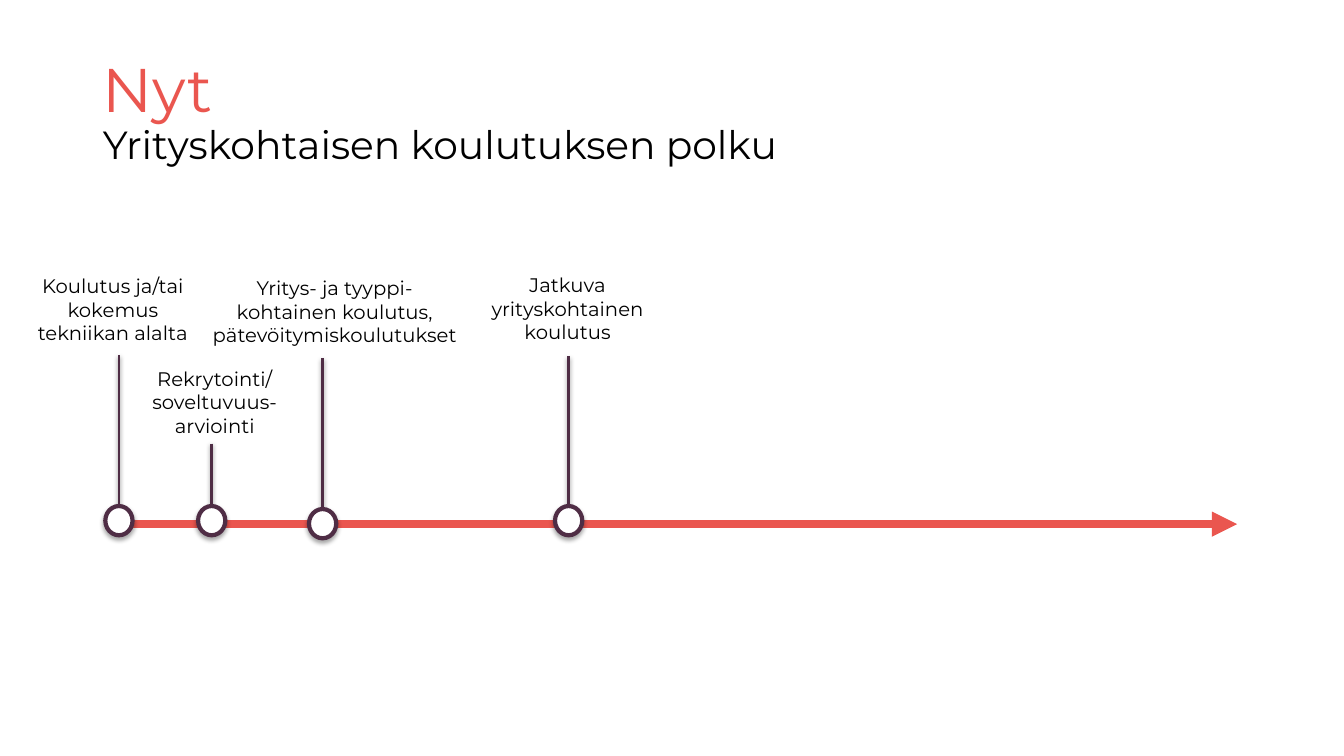
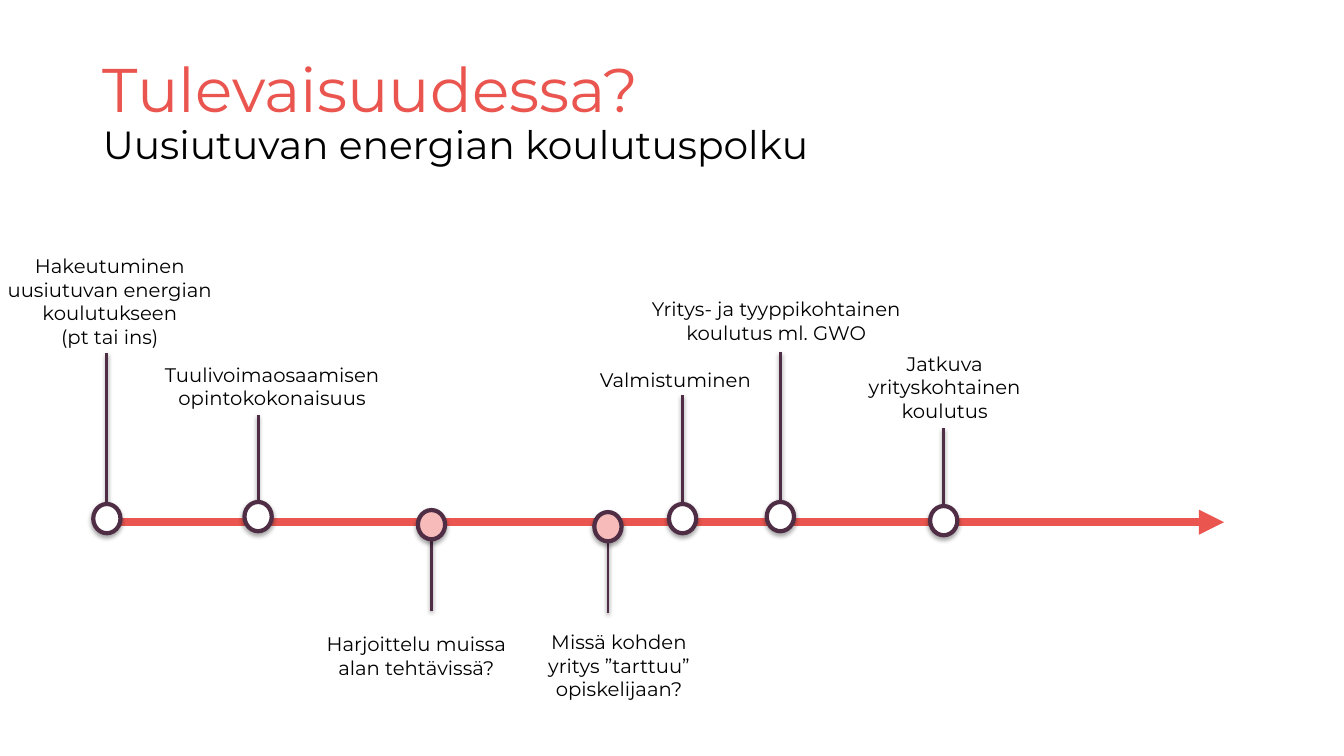
from lxml.etree import SubElement
from pptx import Presentation
from pptx.dml.color import RGBColor
from pptx.enum.shapes import MSO_CONNECTOR, MSO_SHAPE
from pptx.enum.text import MSO_ANCHOR, MSO_AUTO_SIZE, PP_ALIGN
from pptx.oxml.ns import qn
from pptx.util import Inches, Pt

FONT = "Montserrat"
CORAL = "EA564F"
PALE_CORAL = "F7BBB9"
PLUM = "4F2D45"
BLACK = "000000"
WHITE = "FFFFFF"
MARKER_WIDTH, MARKER_HEIGHT = 0.27, 0.29
AXIS_LENGTH = 11.22
LABEL_WIDTH = 2.7
LINE_HEIGHT = 0.235


def color(hex_value):
    return RGBColor.from_string(hex_value)


def set_shadow(shape, distance=0, opacity=0):
    properties = shape._element.spPr
    effects = SubElement(properties, qn("a:effectLst"))
    if opacity:
        shadow = SubElement(effects, qn("a:outerShdw"), blurRad="40000",
                            dist=str(distance), dir="5400000", rotWithShape="0")
        shade = SubElement(shadow, qn("a:srgbClr"), val=BLACK)
        SubElement(shade, qn("a:alpha"), val=str(opacity * 1000))


# Milestone: marker centre x, marker top, stem end, label centre x, label top, fill, label
slides = [
    ("Nyt", "Yrityskohtaisen koulutuksen polku", 1.05, 5.2, [
        (1.18, 5.02, 3.52, 1.12, 2.67, WHITE, "Koulutus ja/tai\nkokemus\ntekniikan alalta"),
        (2.1, 5.02, 4.4, 2.13, 3.59, WHITE, "Rekrytointi/\nsoveltuvuus-\narviointi"),
        (3.2, 5.05, 3.55, 3.32, 2.69, WHITE,
         "Yritys- ja tyyppi-\nkohtainen koulutus,\npätevöitymiskoulutukset"),
        (5.64, 5.02, 3.53, 5.63, 2.66, WHITE, "Jatkuva\nyrityskohtainen\nkoulutus"),
    ]),
    ("Tulevaisuudessa?", "Uusiutuvan energian koulutuspolku", 0.92, 5.18, [
        (1.06, 5, 3.5, 1.09, 2.47, WHITE,
         "Hakeutuminen\nuusiutuvan energian\nkoulutukseen\n(pt tai ins)"),
        (2.56, 4.98, 4.12, 2.7, 3.55, WHITE, "Tuulivoimaosaamisen\nopintokokonaisuus"),
        (4.28, 5.06, 6.06, 4.13, 6.22, PALE_CORAL, "Harjoittelu muissa\nalan tehtävissä?"),
        (6.03, 5.08, 6.08, 6.14, 6.2, PALE_CORAL,
         "Missä kohden\nyritys ”tarttuu”\nopiskelijaan?"),
        (6.77, 5, 3.92, 6.7, 3.6, WHITE, "Valmistuminen"),
        (7.74, 4.98, 3.49, 7.7, 2.9, WHITE, "Yritys- ja tyyppikohtainen\nkoulutus ml. GWO"),
        (9.36, 5.02, 4.25, 9.37, 3.44, WHITE, "Jatkuva\nyrityskohtainen\nkoulutus"),
    ]),
]

presentation = Presentation()
presentation.slide_width = Inches(13.33)
presentation.slide_height = Inches(7.5)

for heading, subtitle, axis_left, axis_top, milestones in slides:
    slide = presentation.slides.add_slide(presentation.slide_layouts[5])

    title = slide.shapes.title
    title.left, title.top = Inches(0.92), Inches(0.4)
    title.width, title.height = Inches(11.5), Inches(1.45)
    title_frame = title.text_frame
    title_frame.auto_size = MSO_AUTO_SIZE.NONE
    title_frame.vertical_anchor = MSO_ANCHOR.MIDDLE
    paragraph = title_frame.paragraphs[0]
    paragraph.text = f"{heading}\n{subtitle}"
    paragraph.alignment = PP_ALIGN.LEFT
    paragraph.line_spacing = 0.9
    for run, size, run_color in zip(paragraph.runs, (44, 28), (CORAL, BLACK)):
        run.font.name = FONT
        run.font.size = Pt(size)
        run.font.color.rgb = color(run_color)

    axis = slide.shapes.add_connector(
        MSO_CONNECTOR.STRAIGHT, Inches(axis_left), Inches(axis_top),
        Inches(axis_left + AXIS_LENGTH), Inches(axis_top))
    axis.line.color.rgb = color(CORAL)
    axis.line.width = Pt(6)
    SubElement(axis.line._get_or_add_ln(), qn("a:tailEnd"), type="triangle")
    set_shadow(axis)

    for center, marker_top, stem_end, label_center, label_top, fill, text in milestones:
        stem = slide.shapes.add_connector(
            MSO_CONNECTOR.STRAIGHT, Inches(center), Inches(stem_end),
            Inches(center), Inches(marker_top + MARKER_HEIGHT / 2))
        stem.line.color.rgb = color(PLUM)
        stem.line.width = Pt(2)
        set_shadow(stem, 20000, 38)

        marker = slide.shapes.add_shape(
            MSO_SHAPE.OVAL, Inches(center - MARKER_WIDTH / 2), Inches(marker_top),
            Inches(MARKER_WIDTH), Inches(MARKER_HEIGHT))
        marker.fill.solid()
        marker.fill.fore_color.rgb = color(fill)
        marker.line.color.rgb = color(PLUM)
        marker.line.width = Pt(3)
        set_shadow(marker, 23000, 35)

        label_height = 0.1 + LINE_HEIGHT * len(text.splitlines())
        label = slide.shapes.add_textbox(
            Inches(label_center - LABEL_WIDTH / 2), Inches(label_top),
            Inches(LABEL_WIDTH), Inches(label_height))
        label.text_frame.word_wrap = True
        paragraph = label.text_frame.paragraphs[0]
        paragraph.text = text
        paragraph.alignment = PP_ALIGN.CENTER
        for run in paragraph.runs:
            run.font.name = FONT
            run.font.size = Pt(14)
            run.font.color.rgb = color(BLACK)

presentation.save("out.pptx")
